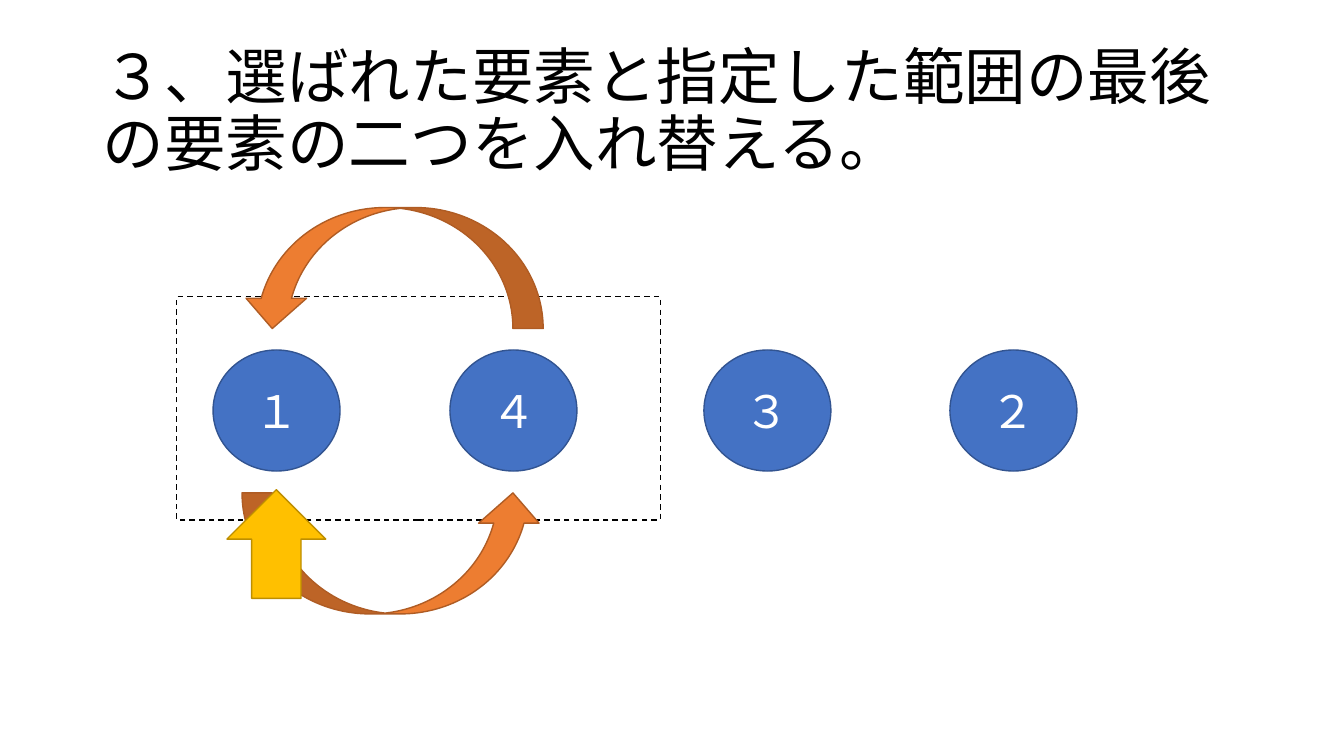
from pptx import Presentation
from pptx import util as u
from pptx.dml.color import RGBColor
from pptx.enum import dml, shapes, text
from pptx.oxml.ns import qn
from lxml import etree

BLACK = RGBColor(0x00, 0x00, 0x00)
WHITE = RGBColor(0xFF, 0xFF, 0xFF)
BLUE = RGBColor(0x44, 0x72, 0xC4)
BLUE_EDGE = RGBColor(0x32, 0x54, 0x91)
ORANGE = RGBColor(0xED, 0x7D, 0x31)
ORANGE_EDGE = RGBColor(0xAF, 0x5C, 0x24)
GOLD = RGBColor(0xFF, 0xC0, 0x00)
GOLD_EDGE = RGBColor(0xBD, 0x8E, 0x00)
FONT = "Noto Sans CJK JP"
SHAPE = shapes.MSO_SHAPE


def write(sp, words, size, color, align, spacing=1.0):
    tf = sp.text_frame
    tf.word_wrap = True
    tf.auto_size = text.MSO_AUTO_SIZE.NONE
    tf.vertical_anchor = text.MSO_ANCHOR.MIDDLE
    p = tf.paragraphs[0]
    p.alignment = align
    p.line_spacing = spacing
    r = p.add_run()
    r.text = words
    for name, value in {"size": u.Pt(size), "name": FONT, "bold": False}.items():
        setattr(r.font, name, value)
    r.font.color.rgb = color
    etree.SubElement(r.font._element, qn("a:ea")).set("typeface", FONT)


def add_shape(s, kind, box, fill, edge):
    """Add a filled, outlined shape; box is left, top, width, height in cm."""
    sp = s.shapes.add_shape(kind, *map(u.Cm, box))
    sp.shadow.inherit = False
    sp.fill.solid()
    sp.fill.fore_color.rgb = fill
    sp.line.color.rgb = edge
    sp.line.width = u.Pt(1)
    return sp


def add_title(s, box, words):
    title = s.shapes.title
    for name, value in zip(("left", "top", "width", "height"), box):
        setattr(title, name, u.Cm(value))
    write(title, words, 44, BLACK, text.PP_ALIGN.LEFT, 0.9)


def add_range(s, box):
    sp = add_shape(s, SHAPE.RECTANGLE, box, WHITE, BLACK)
    sp.line.dash_style = dml.MSO_LINE.DASH


def add_elements(s, box, elements):
    """Place the circles at their offsets from the left of the box."""
    left, top, width, height = box
    for label, offset in elements:
        sp = add_shape(s, SHAPE.FLOWCHART_CONNECTOR,
                       (left + offset, top, width, height), BLUE, BLUE_EDGE)
        write(sp, label, 32, WHITE, text.PP_ALIGN.CENTER)


def add_swap(s, box):
    """Draw the two curved arrows along the top and bottom of the box."""
    left, top, width, height = box
    arrow_height = 3.05
    for y, rotation in ((top, 0), (top + height - arrow_height, 180)):
        sp = add_shape(s, SHAPE.CURVED_DOWN_ARROW,
                       (left, y, width, arrow_height), ORANGE, ORANGE_EDGE)
        sp.rotation = rotation
        sp._element.spPr.find(qn("a:xfrm")).set("flipH", "1")


def main():
    prs = Presentation()
    prs.slide_width, prs.slide_height = u.Cm(33.87), u.Cm(19.05)
    s = prs.slides.add_slide(prs.slide_layouts[5])
    add_title(s, (2.33, 1.01, 29.21, 3.68),
              "３、選ばれた要素と指定した範囲の最後の要素の二つを入れ替える。")
    add_range(s, (4.45, 7.47, 12.19, 5.64))
    add_elements(s, (5.37, 8.82, 3.2, 3.05),
                 (("１", 0), ("４", 5.97), ("３", 12.37), ("２", 18.57)))
    add_swap(s, (6.1, 5.23, 7.59, 10.24))
    add_shape(s, SHAPE.UP_ARROW, (5.72, 12.34, 2.49, 2.74), GOLD, GOLD_EDGE)
    prs.save("out.pptx")


if __name__ == "__main__":
    main()
